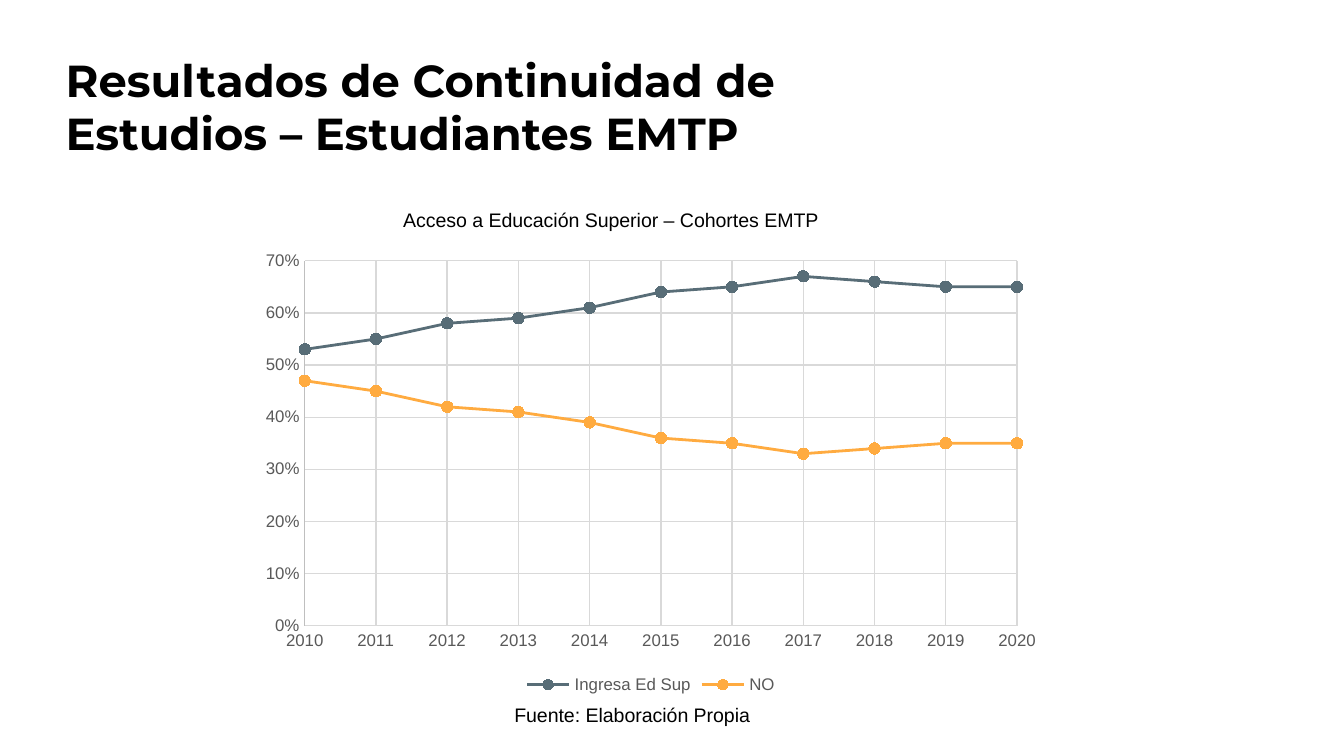
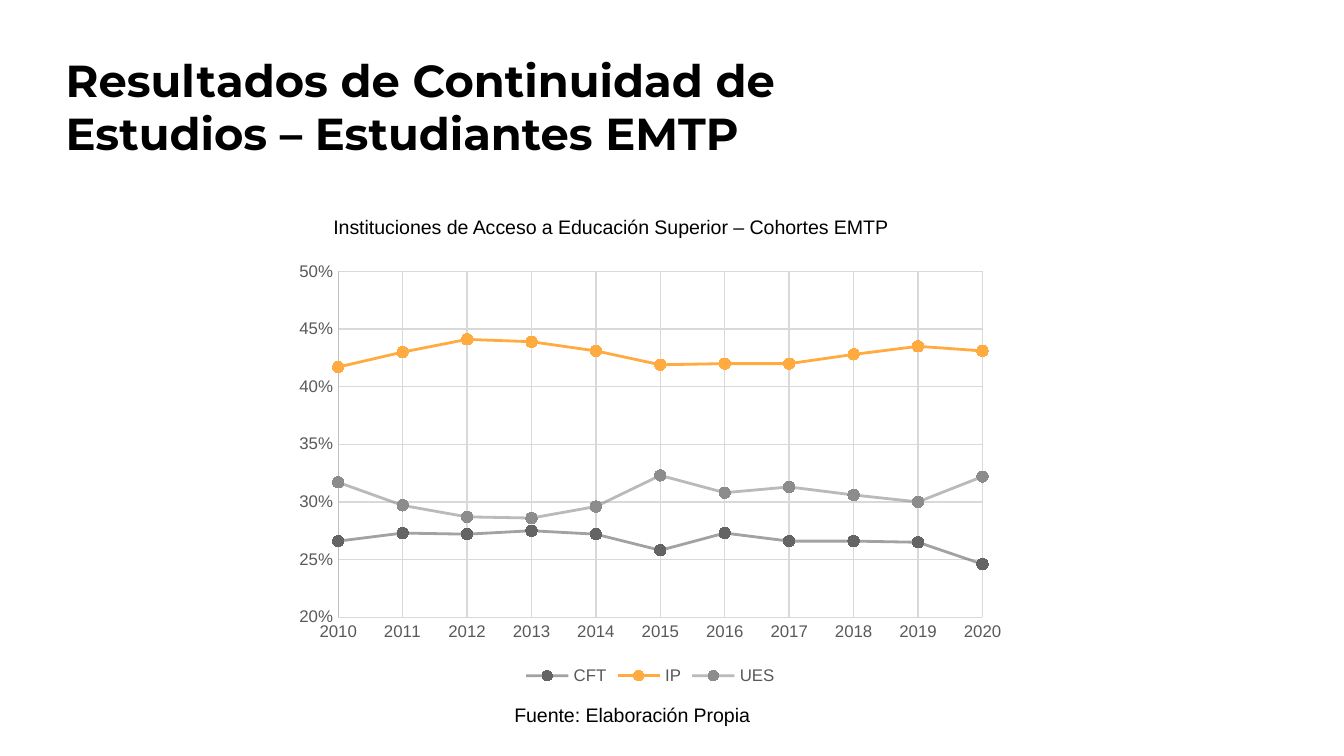
from lxml.etree import SubElement
from pptx import Presentation
from pptx.chart.data import XyChartData
from pptx.dml.color import RGBColor
from pptx.enum.chart import XL_CHART_TYPE, XL_LEGEND_POSITION, XL_MARKER_STYLE, XL_TICK_MARK
from pptx.enum.text import MSO_ANCHOR, MSO_AUTO_SIZE, PP_ALIGN
from pptx.oxml.ns import qn
from pptx.util import Cm, Pt

BLACK, GREY, GRID, EDGE = "000000", "595959", "D9D9D9", "BFBFBF"
SLATE, AMBER, DARK, MID = "586D77", "FFAB40", "646464", "8C8C8C"
YEARS = range(2010, 2021)
HEAD = "Resultados de Continuidad de Estudios – Estudiantes EMTP"
SOURCE = "Fuente: Elaboración Propia"


def tint(code):
    return RGBColor.from_string(code)


def style(font, size, color=BLACK, name="Arial", bold=False):
    font.size, font.name, font.bold = Pt(size), name, bold
    font.color.rgb = tint(color)


def write(frame, text, align=PP_ALIGN.LEFT, **look):
    para = frame.paragraphs[0]
    para.alignment = align
    run = para.add_run()
    run.text = text
    style(run.font, **look)


def stroke(line, color, width=0.75):
    line.color.rgb = tint(color)
    line.width = Pt(width)


class Deck:
    """Holds the presentation, its style and the current slide."""

    def __init__(self):
        self.show = Presentation()
        self.show.slide_width, self.show.slide_height = Cm(25.4), Cm(14.29)

    def page(self):
        self.slide = self.show.slides.add_slide(self.show.slide_layouts[5])

    def title(self, text):
        shape = self.slide.shapes.title
        shape.left, shape.top, shape.width, shape.height = map(Cm, (0.99, 0.74, 15.65, 1.78))
        frame = shape.text_frame
        frame.word_wrap, frame.auto_size = True, MSO_AUTO_SIZE.NONE
        frame.vertical_anchor = MSO_ANCHOR.TOP
        frame.margin_left = frame.margin_right = Cm(0.25)
        frame.margin_top = frame.margin_bottom = Cm(0.25)
        write(frame, text, size=24, name="Montserrat", bold=True)

    def label(self, text, *box):
        frame = self.slide.shapes.add_textbox(*map(Cm, box)).text_frame
        frame.word_wrap, frame.auto_size = False, MSO_AUTO_SIZE.SHAPE_TO_FIT_TEXT
        write(frame, text, size=10.5)

    def axis(self, axis, low, high, step, form, edge):
        axis.minimum_scale, axis.maximum_scale, axis.major_unit = low, high, step
        axis.major_tick_mark = axis.minor_tick_mark = XL_TICK_MARK.NONE
        axis.has_major_gridlines = True
        stroke(axis.major_gridlines.format.line, GRID)
        stroke(axis.format.line, edge)
        labels = axis.tick_labels
        labels.number_format, labels.number_format_is_linked = form, False
        style(labels.font, 9, GREY)

    def chart(self, box, rows, scale):
        data = XyChartData()
        for name, _, _, values in rows:
            series = data.add_series(name)
            for year, value in zip(YEARS, values):
                series.add_data_point(year, value)
        chart = self.slide.shapes.add_chart(
            XL_CHART_TYPE.XY_SCATTER_LINES, *map(Cm, box), data).chart
        style(chart.font, 10)
        chart.has_title = False
        chart.has_legend = True
        chart.legend.position = XL_LEGEND_POSITION.BOTTOM
        chart.legend.include_in_layout = False
        style(chart.legend.font, 9, GREY)
        self.axis(chart.category_axis, YEARS[0], YEARS[-1], 1, "General", GRID)
        self.axis(chart.value_axis, *scale, "0%", EDGE)
        plot = chart.plots[0]
        plot.vary_by_categories = False
        for series, (_, color, alpha, _) in zip(plot.series, rows):
            self.trace(series, color, alpha)

    def trace(self, series, color, alpha):
        series.smooth = False
        stroke(series.format.line, color, 1.5)
        if alpha < 100:
            paint = series._element.xpath("./c:spPr/a:ln//a:srgbClr")[0]
            SubElement(paint, qn("a:alpha")).set("val", str(alpha * 1000))
        mark = series.marker
        mark.style, mark.size = XL_MARKER_STYLE.CIRCLE, 6
        mark.format.fill.solid()
        mark.format.fill.fore_color.rgb = tint(color)
        stroke(mark.format.line, color)


ACCESS = [
    ("Ingresa Ed Sup", SLATE, 100,
     (0.53, 0.55, 0.58, 0.59, 0.61, 0.64, 0.65, 0.67, 0.66, 0.65, 0.65)),
    ("NO", AMBER, 100,
     (0.47, 0.45, 0.42, 0.41, 0.39, 0.36, 0.35, 0.33, 0.34, 0.35, 0.35)),
]
PLACES = [
    ("CFT", DARK, 60,
     (0.266, 0.273, 0.272, 0.275, 0.272, 0.258, 0.273, 0.266, 0.266, 0.265, 0.246)),
    ("IP", AMBER, 100,
     (0.417, 0.43, 0.441, 0.439, 0.431, 0.419, 0.42, 0.42, 0.428, 0.435, 0.431)),
    ("UES", MID, 60,
     (0.317, 0.297, 0.287, 0.286, 0.296, 0.323, 0.308, 0.313, 0.306, 0.3, 0.322)),
]
PAGES = [
    ("Acceso a Educación Superior – Cohortes EMTP", (7.37, 3.81, 8.51, 0.71),
     (4.72, 4.57, 15.16, 8.66), ACCESS, (0, 0.7, 0.1)),
    ("Instituciones de Acceso a Educación Superior – Cohortes EMTP", (6.05, 3.94, 11.23, 0.71),
     (5.38, 4.78, 13.82, 8.28), PLACES, (0.2, 0.5, 0.05)),
]


def main():
    deck = Deck()
    for text, spot, box, rows, scale in PAGES:
        deck.page()
        deck.title(HEAD)
        deck.chart(box, rows, scale)
        deck.label(text, *spot)
        deck.label(SOURCE, 9.47, 13.16, 5.05, 0.71)
    deck.show.save("out.pptx")


if __name__ == "__main__":
    main()
